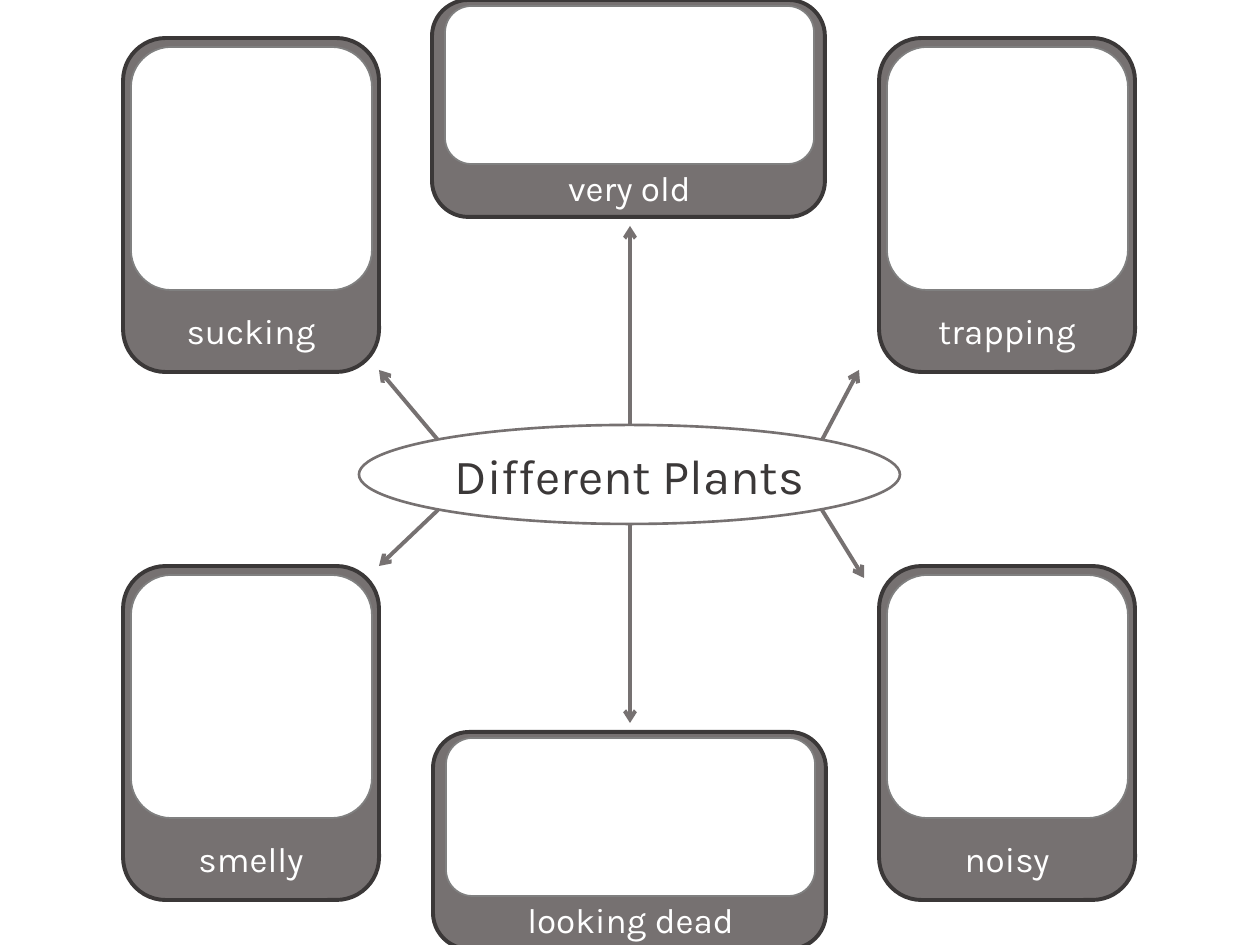
from pptx import Presentation
from pptx import util as u
from pptx.dml.color import RGBColor
from pptx.enum import shapes, text
from pptx.oxml.ns import qn
from lxml import etree

SCALE = 914400 / 126
FONT = "Karla"
COLORS = {
    "white": "FFFFFF",
    "gray": "767171",
    "dark": "3B3838",
    "edge": "808080",
}
TALL = {"frame": (256, 334), "window": (8, 9, 241, 243), "label": (28, 265, 200, 55)}
WIDE = {"frame": (393, 217), "window": (13, 6, 369, 158), "label": (43, 160, 309, 55)}
CARDS = [
    ("trapping", 879, 38, TALL),
    ("sucking", 123, 38, TALL),
    ("smelly", 123, 566, TALL),
    ("noisy", 879, 566, TALL),
    ("very old", 432, 0, WIDE),
    ("looking dead", 433, 732, WIDE),
]
ARROWS = [
    (438, 440, 379, 370),
    (822, 440, 859, 370),
    (822, 510, 864, 578),
    (438, 510, 379, 566),
    (630, 425, 630, 226),
    (630, 524, 630, 723),
]


def px(*values):
    return [u.Emu(round(value * SCALE)) for value in values]


def color(name):
    return RGBColor.from_string(COLORS[name])


def add_outline(parent, kind, bounds, fill, line, width):
    shape = parent.add_shape(kind, *px(*bounds))
    shape.shadow.inherit = False
    if fill:
        shape.fill.solid()
        shape.fill.fore_color.rgb = color(fill)
    else:
        shape.fill.background()
    shape.line.color.rgb = color(line)
    shape.line.width = u.Pt(width)
    return shape


def write(box, words, size, ink):
    box.text_frame.text = words
    box.text_frame.word_wrap = True
    para = box.text_frame.paragraphs[0]
    para.alignment = text.PP_ALIGN.CENTER
    font = para.runs[0].font
    font.name = FONT
    font.size = u.Pt(size)
    font.color.rgb = color(ink)


def add_topic(page, words, bounds):
    ellipse = add_outline(page.shapes, shapes.MSO_SHAPE.OVAL, bounds, None, "gray", 1.5)
    ellipse.text_frame.vertical_anchor = text.MSO_ANCHOR.MIDDLE
    write(ellipse, words, 28, "dark")


def add_arrow(page, ends):
    arrow = page.shapes.add_connector(shapes.MSO_CONNECTOR.STRAIGHT, *px(*ends))
    arrow.line.color.rgb = color("gray")
    arrow.line.width = u.Pt(2.25)
    etree.SubElement(arrow.line._get_or_add_ln(), qn("a:tailEnd"), type="arrow")
    etree.SubElement(arrow._element.spPr, qn("a:effectLst"))


def add_card(page, words, left, top, layout):
    def place(part):
        x, y, width, height = layout[part]
        return left + x, top + y, width, height

    card = page.shapes.add_group_shape().shapes
    rounded = shapes.MSO_SHAPE.ROUNDED_RECTANGLE
    add_outline(card, rounded, (left, top, *layout["frame"]), "gray", "dark", 2.25)
    add_outline(card, rounded, place("window"), "white", "edge", 1)
    label = card.add_textbox(*px(*place("label")))
    write(label, words, 20, "white")
    label.text_frame.auto_size = text.MSO_AUTO_SIZE.SHAPE_TO_FIT_TEXT


def main():
    deck = Presentation()
    deck.slide_width, deck.slide_height = px(1260, 945)
    page = deck.slides.add_slide(deck.slide_layouts[6])
    add_topic(page, "Different Plants", (359, 425, 541, 99))
    for ends in ARROWS:
        add_arrow(page, ends)
    for card in CARDS:
        add_card(page, *card)
    deck.save("out.pptx")


if __name__ == "__main__":
    main()
